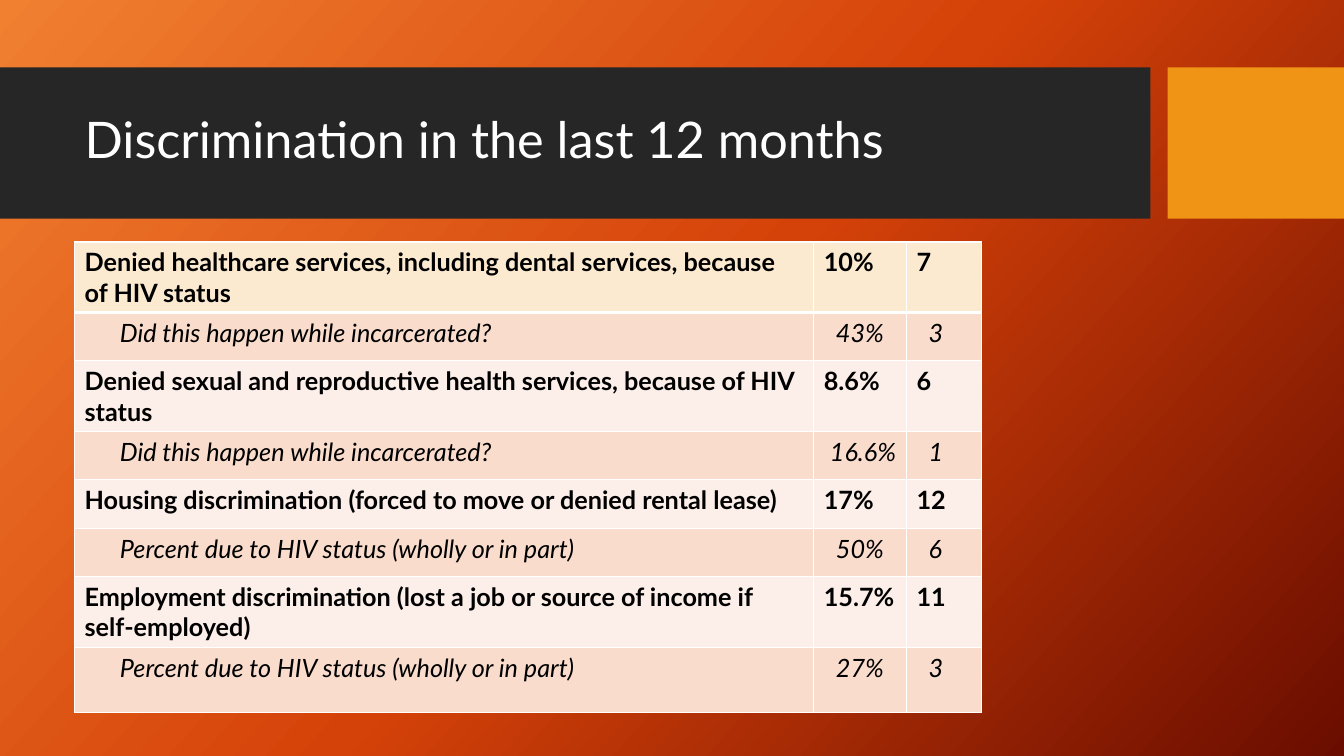
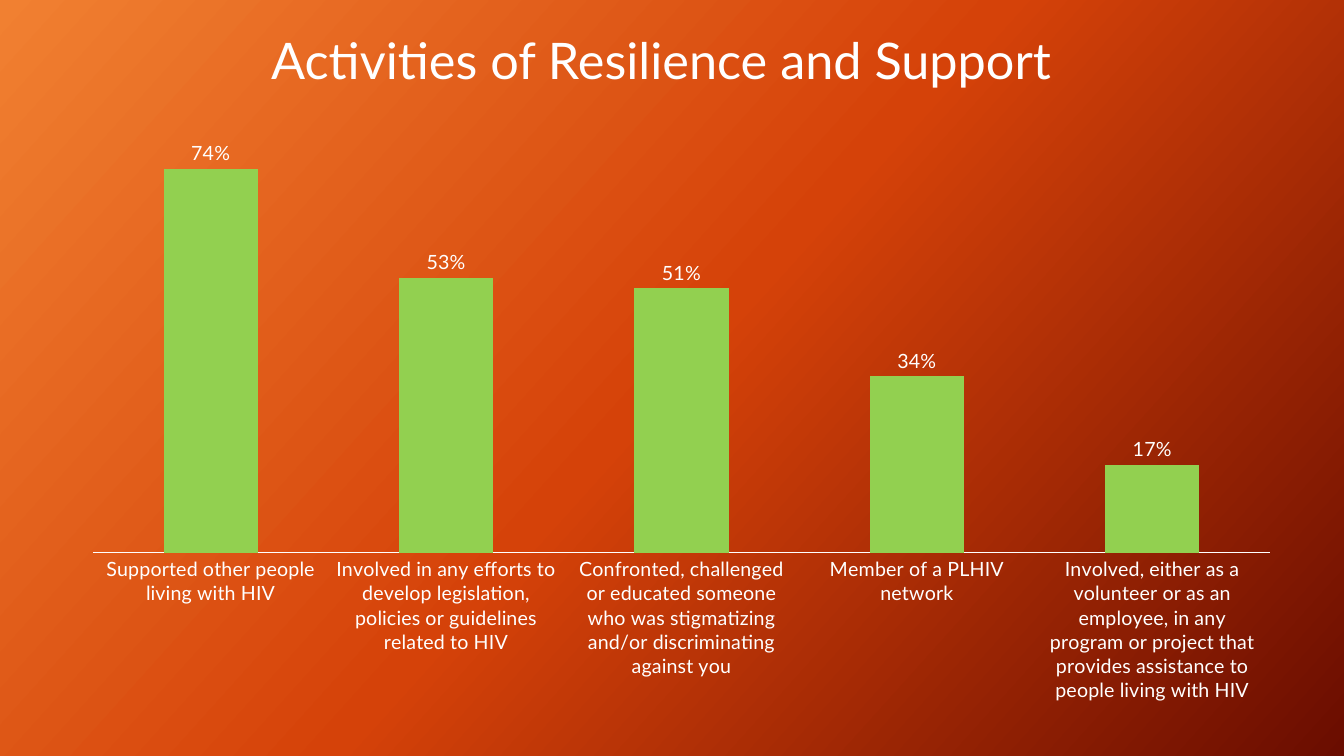
from copy import deepcopy
from dataclasses import dataclass

from pptx import Presentation
from pptx.chart.data import CategoryChartData
from pptx.dml.color import RGBColor
from pptx.enum.chart import XL_CHART_TYPE, XL_LABEL_POSITION, XL_TICK_MARK
from pptx.enum.shapes import MSO_SHAPE
from pptx.enum.text import MSO_ANCHOR, MSO_AUTO_SIZE, PP_ALIGN
from pptx.oxml import parse_xml
from pptx.oxml.ns import nsdecls, qn
from pptx.util import Inches, Pt

COLUMN = XL_CHART_TYPE.COLUMN_CLUSTERED
OUTSIDE_END = XL_LABEL_POSITION.OUTSIDE_END
NO_TICK = XL_TICK_MARK.NONE
RECTANGLE = MSO_SHAPE.RECTANGLE
MIDDLE = MSO_ANCHOR.MIDDLE
NO_AUTOFIT = MSO_AUTO_SIZE.NONE
LEFT = PP_ALIGN.LEFT

WIDTH, HEIGHT = Inches(13.33), Inches(7.5)
TITLE_ONLY = 5


@dataclass(frozen=True)
class Theme:
    """Colours, font and type sizes of the deck."""
    font: str = "Lato"
    background: tuple = ((0, "F18031"), (0.5, "D54209"), (1, "6A0D00"))
    angle: int = 42
    band: str = "262626"
    accent: str = "F09415"
    light: str = "FFFFFF"
    dark: str = "000000"
    first_row: str = "FCEAD0"
    question_row: str = "FCEEE8"
    detail_row: str = "F9DCCC"
    bar: str = "92D050"
    title_size: int = 36
    table_size: int = 18
    label_size: int = 14
    chart_size: int = 10


THEME = Theme()

DISCRIMINATION = [
    ("Denied healthcare services, including dental services, because of HIV status", "10%", "7"),
    ("Did this happen while incarcerated?", "43%", "3"),
    ("Denied sexual and reproductive health services, because of HIV status", "8.6%", "6"),
    ("Did this happen while incarcerated?", "16.6%", "1"),
    ("Housing discrimination (forced to move or denied rental lease)", "17%", "12"),
    ("Percent due to HIV status (wholly or in part)", "50%", "6"),
    ("Employment discrimination (lost a job or source of income if self-employed)", "15.7%", "11"),
    ("Percent due to HIV status (wholly or in part)", "27%", "3"),
]
COLUMN_SHARES = (55, 6.9, 5.6)
ROW_SHARES = (9.33, 6.4, 9.33, 6.4, 6.4, 6.4, 9.33, 8.67)

ACTIVITIES = {
    "Supported other people living with HIV": 0.74,
    "Involved in any efforts to develop legislation, policies or guidelines "
    "related to HIV": 0.53,
    "Confronted, challenged or educated someone who was stigmatizing and/or "
    "discriminating against you": 0.51,
    "Member of a PLHIV network": 0.34,
    "Involved, either as a volunteer or as an employee, in any program or project "
    "that provides assistance to people living with HIV": 0.17,
}


def rgb(value):
    """Turn a hex string into a colour."""
    return RGBColor.from_string(value)


def across(share):
    """Give a percentage of the slide's width."""
    return int(WIDTH * share / 100)


def down(share):
    """Give a percentage of the slide's height."""
    return int(HEIGHT * share / 100)


def place(x, y, w, h):
    """Turn percentages of the slide into left, top, width and height."""
    return across(x), down(y), across(w), down(h)


def style_font(font, size, color):
    """Set the deck's font with a size and colour."""
    font.name = THEME.font
    font.size = Pt(size)
    font.color.rgb = rgb(color)


def set_background(master):
    """Give all slides the diagonal gradient."""
    fill = master.background.fill
    fill.gradient()
    fill.gradient_angle = 360 - THEME.angle
    stop_list = master.element.find(".//" + qn("a:gsLst"))
    stop_list.append(deepcopy(stop_list[0]))
    for stop, (position, color) in zip(fill.gradient_stops, THEME.background):
        stop.position = position
        stop.color.rgb = rgb(color)


def add_block(s, box, color):
    """Add a plain rectangle."""
    sp = s.shapes.add_shape(RECTANGLE, *place(*box))
    sp.shadow.inherit = False
    sp.fill.solid()
    sp.fill.fore_color.rgb = rgb(color)
    sp.line.fill.background()


def set_title(s, text, box):
    """Format the title and bring it to the front."""
    title = s.shapes.title
    title.left, title.top, title.width, title.height = place(*box)
    tf = title.text_frame
    tf.auto_size = NO_AUTOFIT
    tf.vertical_anchor = MIDDLE
    p = tf.paragraphs[0]
    p.alignment = LEFT
    p.line_spacing = 0.9
    r = p.add_run()
    r.text = text
    style_font(r.font, THEME.title_size, THEME.light)
    s.shapes.element.append(title.element)


def set_borders(cell, bottom):
    """Draw light borders, with the bottom one in its own width."""
    tc_pr = cell._tc.get_or_add_tcPr()
    widths = {"lnL": 1, "lnR": 1, "lnT": 1, "lnB": bottom}
    for i, (side, width) in enumerate(widths.items()):
        tc_pr.insert(i, parse_xml(
            f'<a:{side} {nsdecls("a")} w="{Pt(width)}"><a:solidFill>'
            f'<a:srgbClr val="{THEME.light}"/></a:solidFill></a:{side}>'))


def fill_cell(cell, text, color, indent, detail):
    """Write one cell: bold for a question, indented italic for a detail."""
    cell.fill.solid()
    cell.fill.fore_color.rgb = rgb(color)
    cell.margin_left = Inches(0.1 + indent)
    r = cell.text_frame.paragraphs[0].add_run()
    r.text = text
    style_font(r.font, THEME.table_size, THEME.dark)
    r.font.bold = not detail
    r.font.italic = detail


def detail_indent(column, text):
    """Indent details, less so where a long value fills its column."""
    if column == 0:
        return 0.35
    return 0.12 if len(text) < 5 else 0.06


def add_answers_table(s, rows, x, y):
    """Add the table of questions and details in alternating rows."""
    box = place(x, y, sum(COLUMN_SHARES), sum(ROW_SHARES))
    table = s.shapes.add_table(len(rows), len(COLUMN_SHARES), *box).table
    table.first_row = table.horz_banding = False
    for column, share in zip(table.columns, COLUMN_SHARES):
        column.width = across(share)
    for i, (texts, share) in enumerate(zip(rows, ROW_SHARES)):
        table.rows[i].height = down(share)
        detail = i % 2 == 1
        color = THEME.detail_row if detail else THEME.question_row
        if i == 0:
            color = THEME.first_row
        for j, text in enumerate(texts):
            cell = table.cell(i, j)
            indent = detail_indent(j, text) if detail else 0
            fill_cell(cell, text, color, indent, detail)
            set_borders(cell, 3 if i == 0 else 1)


def add_column_chart(s, values, box):
    """Add a one-series column chart with percentage labels."""
    data = CategoryChartData(number_format="0%")
    data.categories = list(values)
    data.add_series("Series 1", list(values.values()))
    chart = s.shapes.add_chart(COLUMN, *place(*box), data).chart
    chart.has_legend = chart.has_title = False
    style_font(chart.font, THEME.chart_size, THEME.light)

    plot = chart.plots[0]
    plot.vary_by_categories = False
    plot.gap_width = 150
    plot.overlap = -25
    fill = plot.series[0].format.fill
    fill.solid()
    fill.fore_color.rgb = rgb(THEME.bar)

    plot.has_data_labels = True
    labels = plot.data_labels
    labels.show_value = True
    labels.position = OUTSIDE_END
    labels.number_format = "0%"
    labels.number_format_is_linked = False
    style_font(labels.font, THEME.label_size, THEME.light)

    value_axis = chart.value_axis
    value_axis.visible = value_axis.has_major_gridlines = False
    value_axis.minimum_scale, value_axis.maximum_scale = 0, 0.8
    category_axis = chart.category_axis
    category_axis.major_tick_mark = category_axis.minor_tick_mark = NO_TICK
    category_axis.format.line.color.rgb = rgb(THEME.light)
    category_axis.format.line.width = Pt(0.75)
    style_font(category_axis.tick_labels.font, THEME.label_size, THEME.light)


def build_discrimination(s):
    """Build the slide with the title band and the table."""
    add_block(s, (0, 8.93, 85.6, 20), THEME.band)
    add_block(s, (86.87, 8.93, 13.13, 20), THEME.accent)
    set_title(s, "Discrimination in the last 12 months", (5.55, 10.93, 78.84, 15.73))
    add_answers_table(s, DISCRIMINATION, 5.55, 32)


def build_activities(s):
    """Build the slide with the chart."""
    add_column_chart(s, ACTIVITIES, (5.1, 16.67, 91.22, 77.73))
    set_title(s, "Activities of Resilience and Support", (19.43, 0, 67.5, 16.67))


def main():
    """Build and save the deck."""
    prs = Presentation()
    prs.slide_width, prs.slide_height = WIDTH, HEIGHT
    set_background(prs.slide_master)
    for build in (build_discrimination, build_activities):
        build(prs.slides.add_slide(prs.slide_layouts[TITLE_ONLY]))
    prs.save("out.pptx")


if __name__ == "__main__":
    main()
